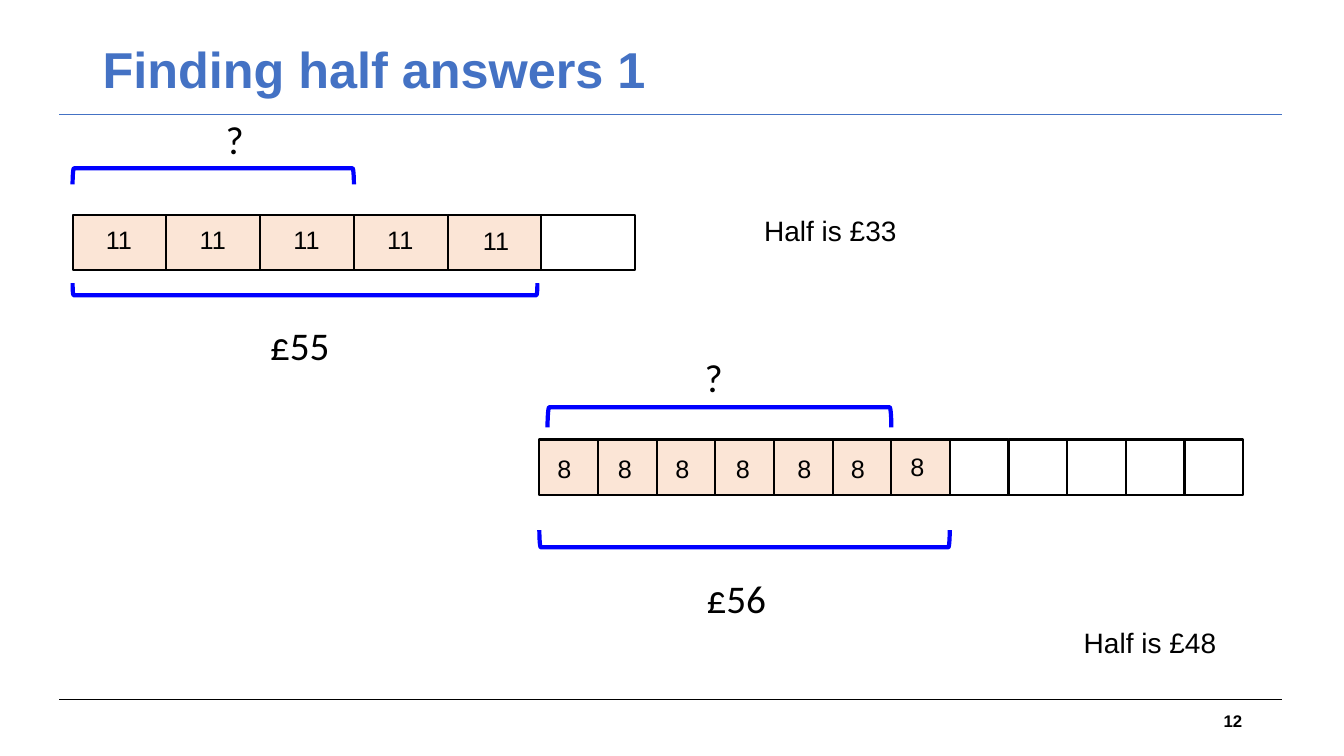
"""Builds the slide of two bar models that answer finding-half problems."""
from lxml import etree
from pptx import Presentation, util as u
from pptx.dml.color import RGBColor
from pptx.enum import shapes, text
from pptx.oxml.ns import qn

PX = 9144
BLACK, BLUE, BRACKET, PEACH, WHITE = "000000", "4472C4", "0000FF", "FBE5D6", "FFFFFF"

RULES = [(114, BLUE), (694, BLACK)]
HEADINGS = [
    ("Finding half answers 1", (92, 40, 1150, 145),
     dict(size=36, color=BLUE, bold=True, spacing=0.9)),
    ("12", (942, 695, 300, 40),
     dict(size=12, bold=True, align="RIGHT", anchor="MIDDLE")),
]
BARS = [
    dict(box=(535, 436, 698, 55), cells=12, shaded=7, blank=None,
         digit="8", align="LEFT",
         digits_at=[(543, 445), (603, 445), (660, 445), (720, 445),
                    (781, 445), (834, 445), (893, 443)],
         above=(543, 404, 341, 20), below=(535, 526, 407, 17),
         unknown=(689, 346), total=("£56", 691, 565),
         answer=("Half is £48", 1065, 616)),
    dict(box=(72, 213, 558, 55), cells=6, shaded=5, blank=WHITE,
         digit="11", align="CENTER",
         digits_at=[(81, 218), (174, 218), (267, 218), (360, 218), (455, 219)],
         above=(72, 167, 279, 16), below=(72, 281, 461, 12),
         unknown=(214, 109), total=("£55", 258, 314),
         answer=("Half is £33", 748, 207)),
]


def rgb(value):
    return RGBColor.from_string(value)


def px(*values):
    return [u.Emu(round(v * PX)) for v in values]


def add_text(words, box, size=18, font="Arial", color=BLACK, bold=False,
             align="LEFT", anchor="TOP", spacing=None):
    tf = s.shapes.add_textbox(*px(*box)).text_frame
    tf.word_wrap = True
    tf.vertical_anchor = getattr(text.MSO_ANCHOR, anchor)
    p = tf.paragraphs[0]
    p.alignment = getattr(text.PP_ALIGN, align)
    p.line_spacing = spacing
    r = p.add_run()
    r.text = words
    r.font.size, r.font.name, r.font.bold = u.Pt(size), font, bold
    r.font.color.rgb = rgb(color)


def add_outlined(kind, box, line, width, fill=None):
    sp = s.shapes.add_shape(kind, *px(*box))
    sp.shadow.inherit = False
    sp.line.color.rgb = rgb(line)
    sp.line.width = u.Pt(width)
    if fill:
        sp.fill.solid()
        sp.fill.fore_color.rgb = rgb(fill)
    else:
        sp.fill.background()
    return sp


def add_bracket(box, rotation):
    x, y, w, h = box
    turned = (x + (w - h) / 2, y + (h - w) / 2, h, w)
    sp = add_outlined(shapes.MSO_SHAPE.LEFT_BRACKET, turned, BRACKET, 3)
    sp.rotation = rotation


def add_rule(y, color):
    line = s.shapes.add_connector(shapes.MSO_CONNECTOR.STRAIGHT, *px(59, y, 1272, y))
    line.line.color.rgb = rgb(color)
    line.line.width = u.Pt(0.75)
    etree.SubElement(line._element.spPr, qn("a:effectLst"))


def add_bar(bar):
    add_bracket(bar["below"], 270)
    add_bracket(bar["above"], 90)
    x, y, w, h = bar["box"]
    step = w / bar["cells"]
    for i in range(bar["cells"]):
        fill = PEACH if i < bar["shaded"] else bar["blank"]
        add_outlined(shapes.MSO_SHAPE.RECTANGLE, (x + i * step, y, step, h),
                     BLACK, 1.5, fill)
    for at in bar["digits_at"]:
        add_text(bar["digit"], (*at, 74, 40), align=bar["align"])
    add_text("?", (*bar["unknown"], 38, 57), size=28, font="Calibri")
    total, *at = bar["total"]
    add_text(total, (*at, 93, 57), size=28, font="Calibri")
    answer, *at = bar["answer"]
    add_text(answer, (*at, 222, 44), size=20)


prs = Presentation()
prs.slide_width, prs.slide_height = px(1333, 750)
s = prs.slides.add_slide(prs.slide_layouts[6])
for y, color in RULES:
    add_rule(y, color)
for words, box, style in HEADINGS:
    add_text(words, box, **style)
for bar in BARS:
    add_bar(bar)
prs.save("out.pptx")
